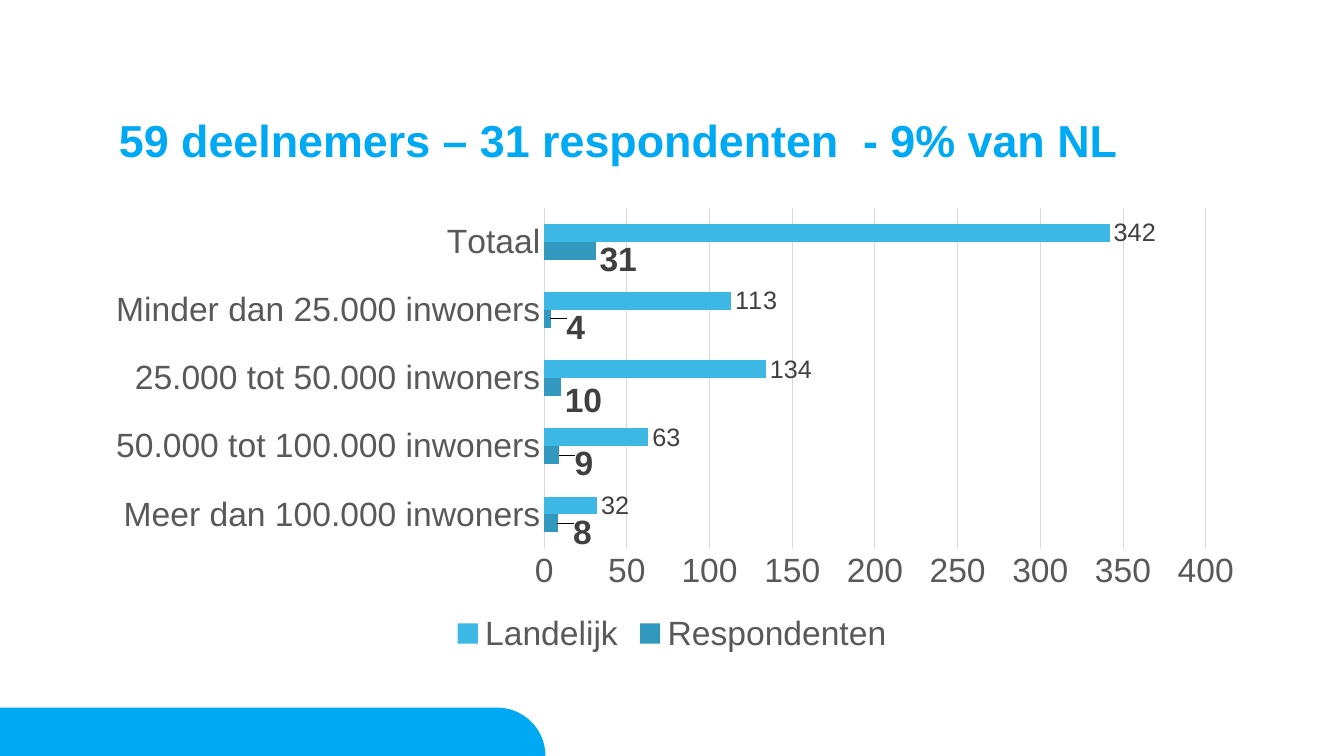
from math import cos, pi, sin

from lxml import etree
from pptx import Presentation
from pptx.chart.data import CategoryChartData
from pptx.dml.color import RGBColor
from pptx.enum.chart import XL_CHART_TYPE, XL_LABEL_POSITION, XL_LEGEND_POSITION, XL_TICK_MARK
from pptx.enum.text import MSO_ANCHOR, PP_ALIGN
from pptx.oxml.ns import qn
from pptx.util import Inches, Pt

BAR_CLUSTERED = XL_CHART_TYPE.BAR_CLUSTERED
OUTSIDE_END = XL_LABEL_POSITION.OUTSIDE_END
LEGEND_BOTTOM = XL_LEGEND_POSITION.BOTTOM
NO_TICK = XL_TICK_MARK.NONE
TOP, LEFT = MSO_ANCHOR.TOP, PP_ALIGN.LEFT

FONT = "Arial"
BRIGHT_BLUE = "00A9F3"
AXIS_GREY = "595959"
LABEL_GREY = "404040"
LINE_GREY = "D9D9D9"

MUNICIPALITIES = [
    "Meer dan 100.000 inwoners",
    "50.000 tot 100.000 inwoners",
    "25.000 tot 50.000 inwoners",
    "Minder dan 25.000 inwoners",
    "Totaal",
]
COUNTS = [
    ("Respondenten", (8, 9, 10, 4, 31), "3398BD", 24, True),
    ("Landelijk", (32, 63, 134, 113, 342), "3DB7E4", 18, False),
]
RESPONDENT_LABEL_SHIFTS = [(0.01, 0.02), (0.01, 0.02), (0, 0.03), (0.01, 0.02), (0, 0.02)]


def color(hex_value):
    """Turn a hex string into a colour."""
    return RGBColor.from_string(hex_value)


def style_font(font, size, hex_value, bold=False):
    """Set typeface, size, colour and weight."""
    font.name = FONT
    font.size = Pt(size)
    font.bold = bold
    font.color.rgb = color(hex_value)


def write_text(frame, text, size=24, hex_value=AXIS_GREY, bold=False, align=LEFT, spacing=1.0):
    """Fill a text frame with one formatted paragraph."""
    frame.margin_left = frame.margin_right = frame.margin_top = frame.margin_bottom = 0
    frame.word_wrap = True
    frame.vertical_anchor = TOP
    paragraph = frame.paragraphs[0]
    paragraph.alignment = align
    paragraph.line_spacing = spacing
    run = paragraph.add_run()
    run.text = text
    style_font(run.font, size, hex_value, bold)


def add_footer_band(slide, right, top, bottom, steps=24):
    """Draw the band at the foot with its rounded top right corner."""
    radius = bottom - top
    angles = [pi / 2 * (1 - step / steps) for step in range(steps + 1)]
    corner = [(right - radius + radius * cos(a), bottom - radius * sin(a)) for a in angles]
    outline = [(Inches(x), Inches(y)) for x, y in [(0, top), *corner, (0, bottom)]]
    builder = slide.shapes.build_freeform(*outline[0])
    builder.add_line_segments(outline[1:], close=True)
    band = builder.convert_to_shape()
    band.shadow.inherit = False
    band.fill.solid()
    band.fill.fore_color.rgb = color(BRIGHT_BLUE)
    band.line.fill.background()


def add_title(slide, text):
    """Place and write the slide title."""
    title = slide.shapes.title
    title.left, title.top = Inches(1.18), Inches(1.18)
    title.width, title.height = Inches(10.97), Inches(0.79)
    write_text(title.text_frame, text, size=32, hex_value=BRIGHT_BLUE, bold=True, spacing=0.9)


def make_layout(**settings):
    """Build a manual chart layout element."""
    layout = etree.Element(qn("c:layout"))
    manual = etree.SubElement(layout, qn("c:manualLayout"))
    for tag, value in settings.items():
        etree.SubElement(manual, qn(f"c:{tag}")).set("val", str(value))
    return layout


def set_plot_area(chart, **settings):
    """Fix the inner plot area inside the chart."""
    plot_area = chart.element.find(".//" + qn("c:plotArea"))
    for automatic in plot_area.findall(qn("c:layout")):
        plot_area.remove(automatic)
    plot_area.insert(0, make_layout(layoutTarget="inner", xMode="edge", yMode="edge", **settings))


def style_axis(axis):
    """Format the tick labels of an axis and hide its ticks."""
    axis.major_tick_mark = axis.minor_tick_mark = NO_TICK
    style_font(axis.tick_labels.font, 24, AXIS_GREY)


def style_line(line):
    """Format a thin grey chart line."""
    line.color.rgb = color(LINE_GREY)
    line.width = Pt(0.75)


def style_series(series, fill, size, bold):
    """Colour the bars and show their values."""
    series.format.fill.solid()
    series.format.fill.fore_color.rgb = color(fill)
    labels = series.data_labels
    labels.show_value = True
    labels.position = OUTSIDE_END
    style_font(labels.font, size, LABEL_GREY, bold)


def shift_labels(series, shifts, size, bold):
    """Move each value label by a fraction of the chart size."""
    for index, _ in enumerate(shifts):
        label = series.points[index].data_label
        label.position = OUTSIDE_END
        style_font(label.font, size, LABEL_GREY, bold)
    entries = series.data_labels._element.findall(qn("c:dLbl"))
    for entry, (x, y) in zip(entries, shifts):
        entry.insert(1, make_layout(x=x, y=y))


def add_response_chart(slide):
    """Add the bar chart of municipalities and respondents."""
    data = CategoryChartData()
    data.categories = MUNICIPALITIES
    for name, values, *_ in COUNTS:
        data.add_series(name, values)
    frame = slide.shapes.add_chart(
        BAR_CLUSTERED, Inches(0.91), Inches(1.97), Inches(11.51), Inches(4.57), data
    )
    chart = frame.chart
    chart.has_title = False
    style_font(chart.font, 24, "000000")
    set_plot_area(chart, x=0.39, y=0.02, w=0.57, h=0.74)

    style_axis(chart.category_axis)
    style_line(chart.category_axis.format.line)
    count_axis = chart.value_axis
    style_axis(count_axis)
    count_axis.minimum_scale, count_axis.maximum_scale = 0, 400
    count_axis.major_unit = 50
    count_axis.format.line.fill.background()
    style_line(count_axis.major_gridlines.format.line)

    chart.has_legend = True
    chart.legend.position = LEGEND_BOTTOM
    chart.legend.include_in_layout = False
    style_font(chart.legend.font, 24, AXIS_GREY)

    plot = chart.plots[0]
    plot.gap_width = 182
    plot.vary_by_categories = False
    for series, (_, _, fill, size, bold) in zip(plot.series, COUNTS):
        style_series(series, fill, size, bold)
    shift_labels(plot.series[0], RESPONDENT_LABEL_SHIFTS, 24, True)


def main():
    """Build and save the slide."""
    deck = Presentation()
    deck.slide_width, deck.slide_height = Inches(13.33), Inches(7.5)
    slide = deck.slides.add_slide(deck.slide_layouts[5])
    add_footer_band(slide, right=5.41, top=7.02, bottom=7.5)
    add_title(slide, "59 deelnemers – 31 respondenten  - 9% van NL")
    add_response_chart(slide)
    deck.save("out.pptx")


if __name__ == "__main__":
    main()
